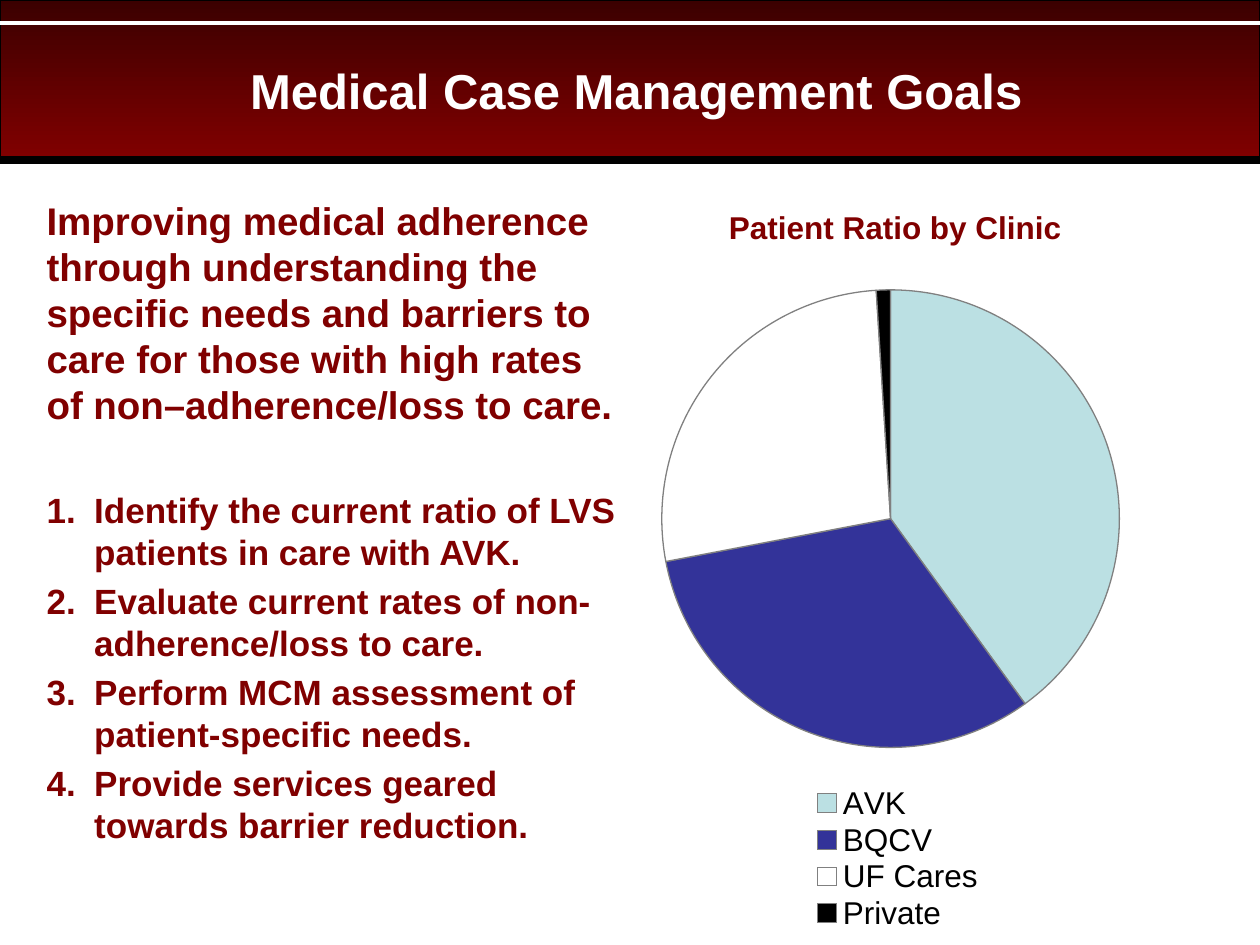
from lxml.etree import SubElement
from pptx import Presentation
from pptx.chart.data import CategoryChartData
from pptx.dml.color import RGBColor
from pptx.enum.chart import XL_CHART_TYPE as ChartType, XL_LEGEND_POSITION as LegendPos
from pptx.enum.shapes import MSO_CONNECTOR as Connector, MSO_SHAPE as Shape
from pptx.enum.text import MSO_ANCHOR as Anchor, MSO_AUTO_SIZE as AutoSize, PP_ALIGN as Align
from pptx.oxml import parse_xml
from pptx.oxml.ns import nsdecls, qn
from pptx.util import Cm, Pt

FONT = "Arial"
COLORS = {
    "dark": "3B0000", "maroon": "800000", "white": "FFFFFF", "black": "000000",
    "gray": "808080", "aqua": "BBE0E3", "blue": "333399",
}
CLINICS = [("AVK", 40, "aqua"), ("BQCV", 32, "blue"),
           ("UF Cares", 27, "white"), ("Private", 1, "black")]
INTRO = ("Improving medical adherence through understanding the specific needs and "
         "barriers to care for those with high rates of non–adherence/loss to care.")
GOALS = [
    "Identify the current ratio of LVS patients in care with AVK.",
    "Evaluate current rates of non-adherence/loss to care.",
    "Perform MCM assessment of patient-specific needs.",
    "Provide services geared towards barrier reduction.",
]


def color(name):
    return RGBColor.from_string(COLORS[name])


def style_font(font, size, color_name, bold=False):
    font.name, font.size, font.bold = FONT, Pt(size), bold
    font.color.rgb = color(color_name)


def add_rule(slide, left, top, width, color_name, weight):
    rule = slide.shapes.add_connector(Connector.STRAIGHT, left, top, left + width, top)
    rule.line.color.rgb = color(color_name)
    rule.line.width = Pt(weight)
    SubElement(rule.element.spPr, qn("a:effectLst"))


def add_header(slide, left, top, width, height):
    # Gradient band
    band = slide.shapes.add_shape(Shape.RECTANGLE, left, top, width, height)
    band.shadow.inherit = False
    band.fill.gradient()
    band.fill.gradient_angle = 270
    for stop, name, position in zip(band.fill.gradient_stops, ("dark", "maroon"), (0, 1)):
        stop.color.rgb = color(name)
        stop.position = position
    band.line.color.rgb = color("black")
    band.line.width = Pt(0.75)

    # Rules below and across the band
    add_rule(slide, left, top + height + Cm(0.05), width, "black", 4.5)
    add_rule(slide, left, top + Cm(0.46), width, "white", 2.25)

    # Title, brought in front of the band
    title = slide.shapes.title
    title.left, title.top = left + Cm(0.76), top + Cm(0.84)
    title.width, title.height = width - Cm(1.27), Cm(1.7)
    frame = title.text_frame
    frame.text = "Medical Case Management Goals"
    frame.auto_size = AutoSize.NONE
    frame.vertical_anchor = Anchor.BOTTOM
    frame.paragraphs[0].alignment = Align.CENTER
    style_font(frame.paragraphs[0].runs[0].font, 28, "white", True)
    title.element.getparent().append(title.element)


def add_goals(slide, left, top, width, height):
    frame = slide.shapes.add_textbox(left, top, width, height).text_frame
    frame.word_wrap = True
    intro = frame.paragraphs[0]
    intro.text = INTRO
    style_font(intro.runs[0].font, 22, "maroon", True)

    # Numbered goals
    for index, goal in enumerate(GOALS):
        item = frame.add_paragraph()
        item.text = goal
        item.space_before = Pt(4 if index else 35)
        properties = item._p.get_or_add_pPr()
        properties.set("marL", str(Cm(0.96)))
        properties.set("indent", str(-Cm(0.96)))
        SubElement(properties, qn("a:buFont"), typeface=FONT)
        SubElement(properties, qn("a:buAutoNum"), type="arabicPeriod")
        style_font(item.runs[0].font, 20, "maroon", True)


def set_layout(part, index, inner=False, **fractions):
    """Place a chart part by fractions of the chart's size."""
    for old in part.findall(qn("c:layout")):
        part.remove(old)
    layout = parse_xml(f'<c:layout {nsdecls("c")}><c:manualLayout/></c:layout>')
    manual = layout[0]
    if inner:
        SubElement(manual, qn("c:layoutTarget"), val="inner")
    for axis in ("x", "y"):
        SubElement(manual, qn(f"c:{axis}Mode"), val="edge")
    for key, value in fractions.items():
        SubElement(manual, qn(f"c:{key}"), val=str(value))
    part.insert(index, layout)


def add_clinic_chart(slide, left, top, width, height):
    data = CategoryChartData()
    data.categories = [name for name, _, _ in CLINICS]
    data.add_series("Series 1", [share for _, share, _ in CLINICS])
    chart = slide.shapes.add_chart(ChartType.PIE, left, top, width, height, data).chart
    style_font(chart.font, 18, "black")

    # Title and legend
    chart.has_title = True
    heading = chart.chart_title.text_frame
    heading.text = "Patient Ratio by Clinic"
    style_font(heading.paragraphs[0].runs[0].font, 18, "maroon", True)
    chart.has_legend = True
    chart.legend.position = LegendPos.RIGHT
    chart.legend.include_in_layout = False

    # Slices
    plot = chart.plots[0]
    plot.vary_by_categories = True
    for index, (_, _, name) in enumerate(CLINICS):
        slice_format = plot.series[0].points[index].format
        slice_format.fill.solid()
        slice_format.fill.fore_color.rgb = color(name)
        slice_format.line.color.rgb = color("gray")
        slice_format.line.width = Pt(0.75)

    # Placement within the chart
    body = chart.element.find(qn("c:chart"))
    set_layout(body.find(qn("c:title")), 1, x=0.26, y=0.01)
    set_layout(body.find(qn("c:plotArea")), 0, inner=True, x=0.17, y=0.13, w=0.67, h=0.62)
    set_layout(body.find(qn("c:legend")), 1, x=0.39, y=0.8, w=0.25, h=0.2)


def main():
    deck = Presentation()
    deck.slide_width, deck.slide_height = Cm(25.4), Cm(19.05)
    slide = deck.slides.add_slide(deck.slide_layouts[5])
    slide.background.fill.solid()
    slide.background.fill.fore_color.rgb = color("white")
    add_header(slide, Cm(0), Cm(0), deck.slide_width, Cm(3.18))
    add_clinic_chart(slide, Cm(11), Cm(3.91), Cm(13.77), Cm(14.88))
    add_goals(slide, Cm(0.69), Cm(3.84), Cm(12.01), Cm(13.03))
    deck.save("out.pptx")


if __name__ == "__main__":
    main()
